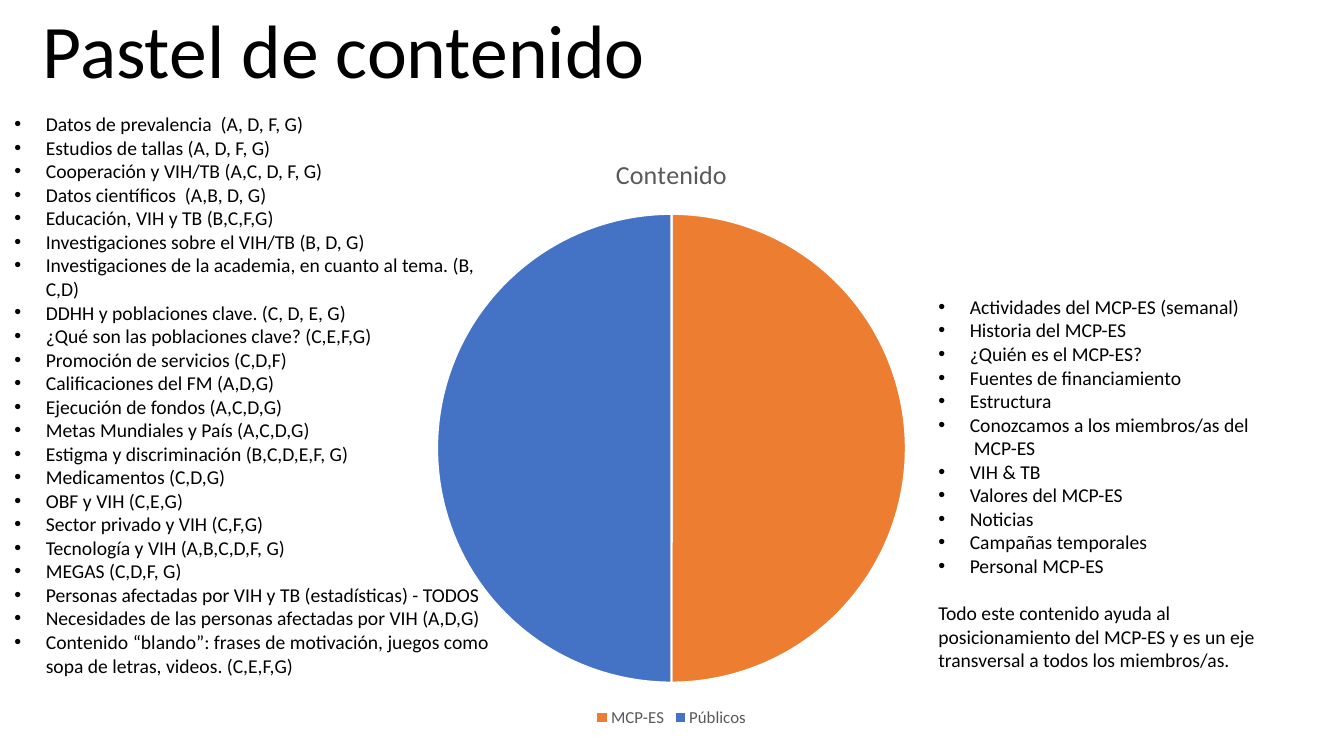
"""Build the "Pastel de contenido" slide: a pie chart between two topic lists."""
from dataclasses import dataclass

from lxml import etree
from pptx import Presentation
from pptx import util as u
from pptx.chart import data as chart_data
from pptx.dml.color import RGBColor
from pptx.enum import chart as chart_enum
from pptx.enum import text
from pptx.oxml import ns

PX = 9525


@dataclass(frozen=True)
class Theme:
    font: str = "Calibri"
    ink: str = "000000"
    muted: str = "595959"
    edge: str = "FFFFFF"
    title_size: float = 54
    body_size: float = 14
    chart_title_size: float = 18.6
    legend_size: float = 12
    indent: int = 30


@dataclass(frozen=True)
class Box:
    left: int
    top: int
    width: int
    height: int

    def emu(self) -> tuple[int, int, int, int]:
        return self.left * PX, self.top * PX, self.width * PX, self.height * PX


@dataclass(frozen=True)
class Slice:
    name: str
    value: int
    color: str


@dataclass(frozen=True)
class Line:
    words: str
    bullet: bool = True
    indent: int = 0
    before: float = 0


THEME = Theme()
TITLE_BOX = Box(31, 22, 960, 73)
CHART_BOX = Box(213, 128, 853, 569)
MEMBERS_BOX = Box(884, 276, 366, 372)
TOPICS_BOX = Box(4, 102, 487, 620)

SLICES = [Slice("MCP-ES", 50, "ED7D31"), Slice("Públicos", 50, "4472C4")]

MEMBERS = [
    Line("Actividades del MCP-ES (semanal)"),
    Line("Historia del MCP-ES"),
    Line("¿Quién es el MCP-ES?"),
    Line("Fuentes de financiamiento"),
    Line("Estructura"),
    Line("Conozcamos a los miembros/as del"),
    Line("MCP-ES", bullet=False, indent=34),
    Line("VIH & TB"),
    Line("Valores del MCP-ES"),
    Line("Noticias"),
    Line("Campañas temporales"),
    Line("Personal MCP-ES"),
    Line("Todo este contenido ayuda al posicionamiento del MCP-ES y es un eje "
         "transversal a todos los miembros/as.", bullet=False, before=17),
]

TOPICS = [Line(words) for words in (
    "Datos de prevalencia  (A, D, F, G)",
    "Estudios de tallas (A, D, F, G)",
    "Cooperación y VIH/TB (A,C, D, F, G)",
    "Datos científicos  (A,B, D, G)",
    "Educación, VIH y TB (B,C,F,G)",
    "Investigaciones sobre el VIH/TB (B, D, G)",
    "Investigaciones de la academia, en cuanto al tema. (B, C,D)",
    "DDHH y poblaciones clave. (C, D, E, G)",
    "¿Qué son las poblaciones clave? (C,E,F,G)",
    "Promoción de servicios (C,D,F)",
    "Calificaciones del FM (A,D,G)",
    "Ejecución de fondos (A,C,D,G)",
    "Metas Mundiales y País (A,C,D,G)",
    "Estigma y discriminación (B,C,D,E,F, G)",
    "Medicamentos (C,D,G)",
    "OBF y VIH (C,E,G)",
    "Sector privado y VIH (C,F,G)",
    "Tecnología y VIH (A,B,C,D,F, G)",
    "MEGAS (C,D,F, G)",
    "Personas afectadas por VIH y TB (estadísticas) - TODOS",
    "Necesidades de las personas afectadas por VIH (A,D,G)",
    "Contenido “blando”: frases de motivación, juegos como sopa de letras, "
    "videos. (C,E,F,G)",
)]


def style_font(font, *, size: float, color: str) -> None:
    font.name = THEME.font
    font.size = u.Pt(size)
    font.bold = False
    font.color.rgb = RGBColor.from_string(color)


def write(para, words: str, *, size: float, color: str = THEME.ink,
          spacing: float = 1.0, before: float = 0) -> None:
    para.alignment = text.PP_ALIGN.LEFT
    para.line_spacing = spacing
    para.space_before = u.Pt(before)
    span = para.add_run()
    span.text = words
    style_font(span.font, size=size, color=color)


def set_bullet(para, line: Line) -> None:
    props = para._p.get_or_add_pPr()
    margin = THEME.indent if line.bullet else line.indent
    props.set("marL", str(margin * PX))
    props.set("indent", str(-THEME.indent * PX if line.bullet else 0))
    if line.bullet:
        etree.SubElement(props, ns.qn("a:buFont")).set("typeface", "Arial")
        etree.SubElement(props, ns.qn("a:buChar")).set("char", "•")
    else:
        etree.SubElement(props, ns.qn("a:buNone"))


def place(holder, box: Box) -> None:
    holder.left, holder.top, holder.width, holder.height = box.emu()
    holder.text_frame.word_wrap = True


def fill_title(holder, box: Box, words: str) -> None:
    place(holder, box)
    frame = holder.text_frame
    frame.auto_size = text.MSO_AUTO_SIZE.NONE
    frame.vertical_anchor = text.MSO_ANCHOR.BOTTOM
    write(frame.paragraphs[0], words, size=THEME.title_size, spacing=0.9)


def fill_list(holder, box: Box, lines: list[Line]) -> None:
    place(holder, box)
    frame = holder.text_frame
    frame.auto_size = text.MSO_AUTO_SIZE.SHAPE_TO_FIT_TEXT
    frame.vertical_anchor = text.MSO_ANCHOR.TOP
    for index, line in enumerate(lines):
        para = frame.add_paragraph() if index else frame.paragraphs[0]
        write(para, line.words, size=THEME.body_size, before=line.before)
        set_bullet(para, line)


def add_pie(page, box: Box, name: str, slices: list[Slice]):
    data = chart_data.CategoryChartData()
    data.categories = [part.name for part in slices]
    data.add_series(name, [part.value for part in slices])
    holder = page.shapes.add_chart(chart_enum.XL_CHART_TYPE.PIE, *box.emu(), data)
    chart = holder.chart
    style_font(chart.font, size=10, color=THEME.ink)
    chart.has_title = True
    write(chart.chart_title.text_frame.paragraphs[0], name,
          size=THEME.chart_title_size, color=THEME.muted)
    chart.has_legend = True
    chart.legend.position = chart_enum.XL_LEGEND_POSITION.BOTTOM
    chart.legend.include_in_layout = False
    style_font(chart.legend.font, size=THEME.legend_size, color=THEME.muted)
    plot = chart.plots[0]
    plot.vary_by_categories = True
    for index, part in enumerate(slices):
        look = plot.series[0].points[index].format
        look.fill.solid()
        look.fill.fore_color.rgb = RGBColor.from_string(part.color)
        look.line.color.rgb = RGBColor.from_string(THEME.edge)
        look.line.width = u.Pt(1.5)
    return holder


def main() -> None:
    deck = Presentation()
    deck.slide_width, deck.slide_height = 1280 * PX, 720 * PX
    page = deck.slides.add_slide(deck.slide_layouts.get_by_name("Two Content"))
    title, members, topics = page.placeholders
    fill_title(title, TITLE_BOX, "Pastel de contenido")
    fill_list(members, MEMBERS_BOX, MEMBERS)
    fill_list(topics, TOPICS_BOX, TOPICS)
    pie = add_pie(page, CHART_BOX, "Contenido", SLICES)
    title.element.addnext(pie.element)
    deck.save("out.pptx")


if __name__ == "__main__":
    main()
